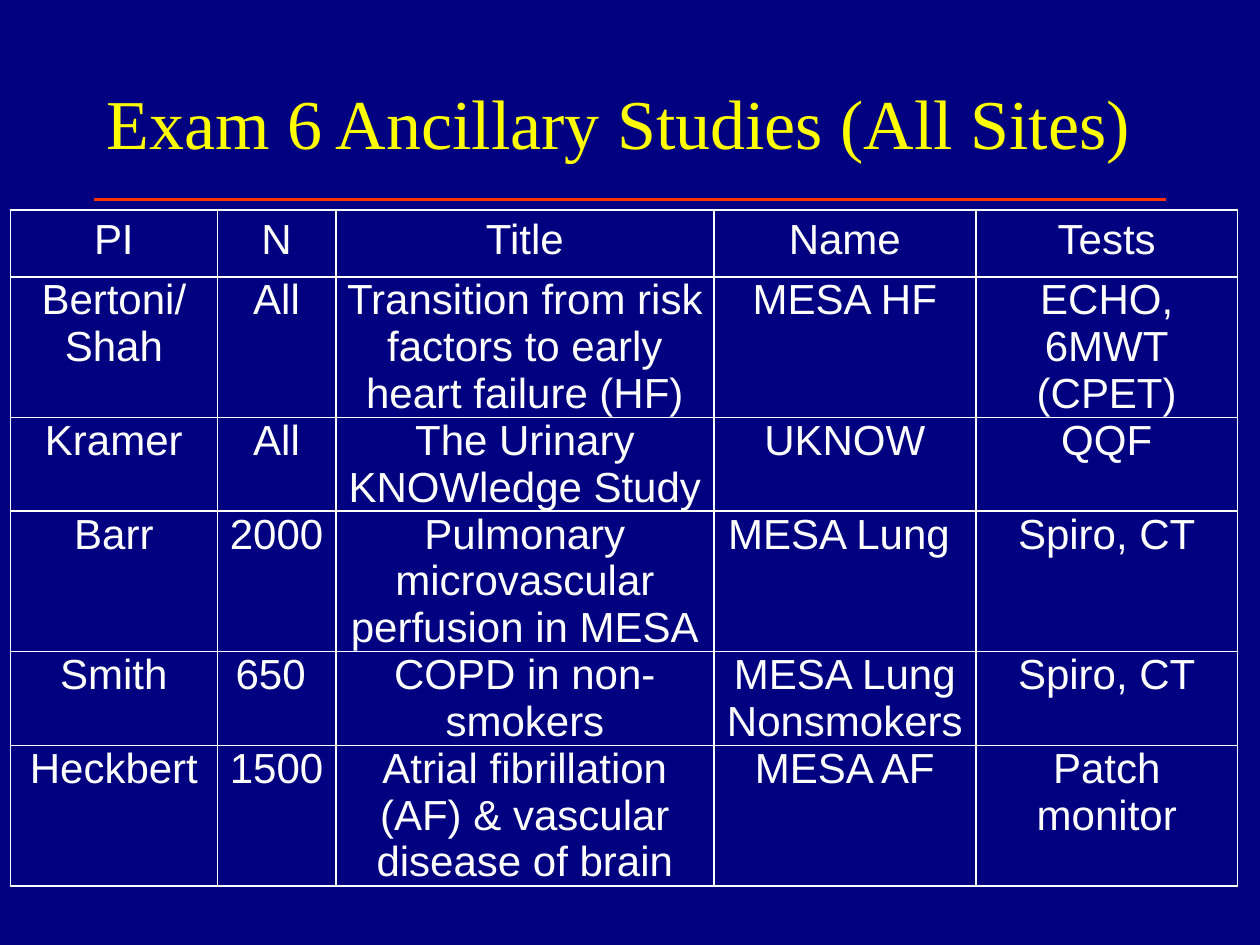
import pptx
import pptx.dml.color
import pptx.enum.shapes
import pptx.enum.text
import pptx.oxml.ns
import pptx.util
from lxml import etree

Cm, Pt = pptx.util.Cm, pptx.util.Pt
RGBColor = pptx.dml.color.RGBColor
PP_ALIGN = pptx.enum.text.PP_ALIGN
MSO_ANCHOR = pptx.enum.text.MSO_ANCHOR
qn = pptx.oxml.ns.qn

NAVY = RGBColor(0x00, 0x00, 0x80)
YELLOW = RGBColor(0xFF, 0xFF, 0x00)
RED = RGBColor(0xFF, 0x33, 0x00)
WHITE = RGBColor(0xFF, 0xFF, 0xFF)

COL_WIDTHS = [4.17, 2.39, 7.62, 5.28, 5.28]
ROW_HEIGHT = 1.35
ROWS = [
    ["PI", "N", "Title", "Name", "Tests"],
    ["Bertoni/Shah", "All", "Transition from risk factors to early heart failure (HF)",
     "MESA HF", "ECHO,\n6MWT\n(CPET)"],
    ["Kramer", "All", "The Urinary KNOWledge Study ", "UKNOW", "QQF"],
    ["Barr", "2000", "Pulmonary microvascular perfusion in MESA", "MESA Lung ", "Spiro, CT"],
    ["Smith", "650 ", "COPD in non-smokers", "MESA Lung Nonsmokers", "Spiro, CT"],
    ["Heckbert", "1500 ", "Atrial fibrillation (AF) & vascular disease of brain",
     "MESA AF", "Patch monitor"],
]


def write_text(tf, text, *, font, size, color, align):
    tf.text = text
    for p in tf.paragraphs:
        p.alignment = align
        for r in p.runs:
            r.font.name = font
            r.font.size = Pt(size)
            r.font.color.rgb = color


def add_borders(cell, color, width):
    tc_pr = cell._tc.get_or_add_tcPr()
    for side in ("lnL", "lnR", "lnT", "lnB"):
        ln = etree.SubElement(tc_pr, qn(f"a:{side}"), w=str(Pt(width)))
        fill = etree.SubElement(ln, qn("a:solidFill"))
        etree.SubElement(fill, qn("a:srgbClr"), val=str(color))


prs = pptx.Presentation()
prs.slide_width, prs.slide_height = Cm(25.4), Cm(19.05)
s = prs.slides.add_slide(prs.slide_layouts[5])
s.background.fill.solid()
s.background.fill.fore_color.rgb = NAVY

# Rule under the title
rule = s.shapes.add_connector(pptx.enum.shapes.MSO_CONNECTOR.STRAIGHT,
                              Cm(1.9), Cm(4.02), Cm(23.5), Cm(4.02))
rule.line.color.rgb = RED
rule.line.width = Pt(2)
etree.SubElement(rule._element.spPr, qn("a:effectLst"))

# Title
title = s.shapes.title
title.left, title.top, title.width, title.height = Cm(1.9), Cm(0.85), Cm(22.43), Cm(3.18)
tf = title.text_frame
tf.word_wrap = True
tf.auto_size = pptx.enum.text.MSO_AUTO_SIZE.NONE
tf.vertical_anchor = MSO_ANCHOR.MIDDLE
write_text(tf, "Exam 6 Ancillary Studies (All Sites)", font="Times New Roman",
           size=40, color=YELLOW, align=PP_ALIGN.LEFT)

# Table of studies
table = s.shapes.add_table(len(ROWS), len(COL_WIDTHS), Cm(0.21), Cm(4.23),
                           Cm(sum(COL_WIDTHS)), Cm(ROW_HEIGHT * len(ROWS))).table
table.horz_banding = False
table.first_row = False
for column, width in zip(table.columns, COL_WIDTHS):
    column.width = Cm(width)
for i, row in enumerate(ROWS):
    table.rows[i].height = Cm(ROW_HEIGHT)
    for j, text in enumerate(row):
        cell = table.cell(i, j)
        add_borders(cell, WHITE, 1)
        cell.fill.background()
        cell.vertical_anchor = MSO_ANCHOR.TOP
        if i > 0:
            cell.margin_left = cell.margin_right = Cm(0.18)
            cell.margin_top = cell.margin_bottom = Cm(0)
        write_text(cell.text_frame, text, font="Arial", size=24, color=WHITE,
                   align=PP_ALIGN.CENTER)

prs.save("out.pptx")
